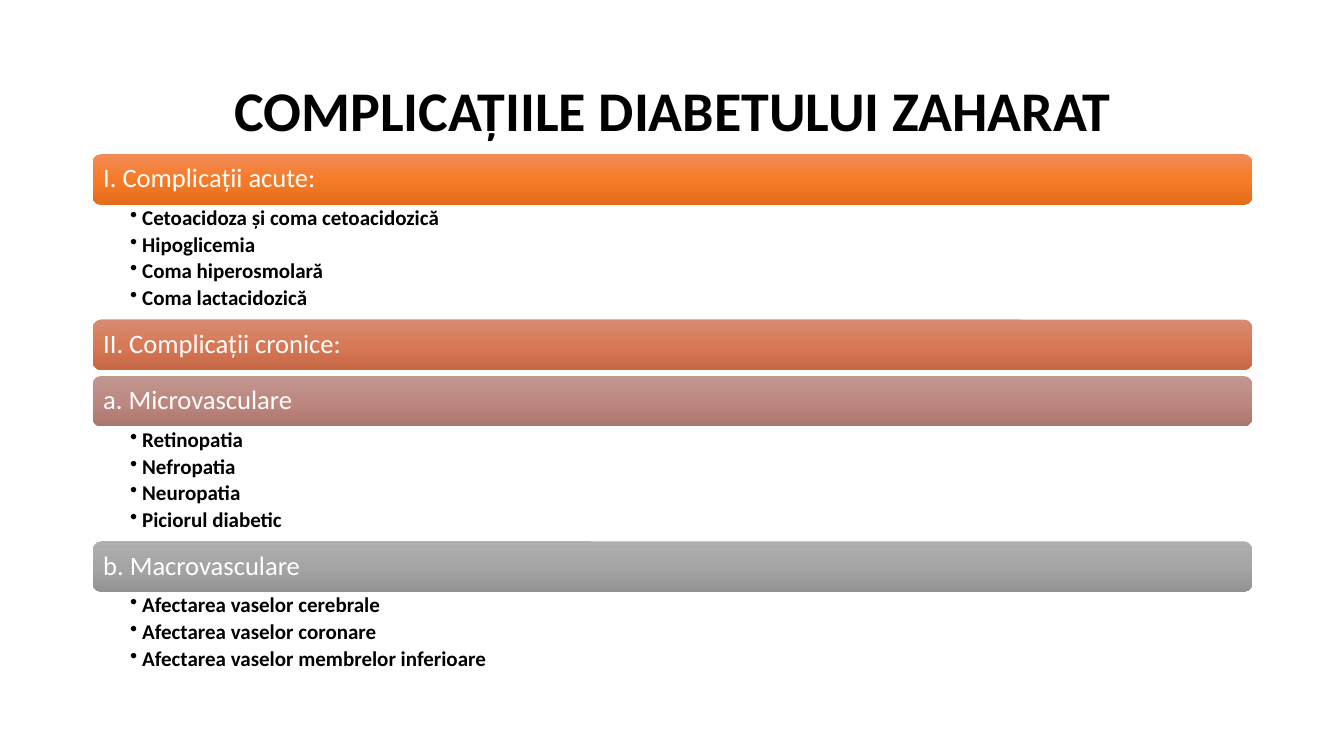
import copy
from dataclasses import dataclass

import pptx
import pptx.util
import pptx.dml.color
import pptx.enum.shapes
import pptx.enum.text
import pptx.oxml.ns
from lxml import etree

PX = 9144  # 100 px to the inch
FONT = "Calibri"
LEFT, WIDE, TALL = 92, 1150, 50
TOP, GAP = 153, 6
ROW, PAD = 28, 2
DENT = 12

HUES = {
    "text": "000000",
    "bar": "FFFFFF",
    "acute": ("F18C57", "F67B28", "E56C19"),
    "chronic": ("D78B72", "D77956", "C66846"),
    "micro": ("C19791", "BC8880", "AA766E"),
    "macro": ("AFAFAF", "A5A5A5", "939393"),
}


@dataclass
class Part:
    head: str
    hue: str
    items: tuple[str, ...] = ()


PARTS = [
    Part("I. Complicații acute:", "acute",
         ("Cetoacidoza și coma cetoacidozică", "Hipoglicemia",
          "Coma hiperosmolară", "Coma lactacidozică")),
    Part("II. Complicații cronice:", "chronic"),
    Part("a. Microvasculare", "micro",
         ("Retinopatia", "Nefropatia", "Neuropatia", "Piciorul diabetic")),
    Part("b. Macrovasculare", "macro",
         ("Afectarea vaselor cerebrale", "Afectarea vaselor coronare",
          "Afectarea vaselor membrelor inferioare")),
]


def px(*sizes: int) -> list[int]:
    return [size * PX for size in sizes]


def tint(code: str) -> pptx.dml.color.RGBColor:
    return pptx.dml.color.RGBColor.from_string(code)


def write(frame, *lines: str, size: int, hue: str = "text", bold: bool = False,
          align: str = "LEFT", anchor: str = "MIDDLE", after: float = 0,
          inset: tuple[int, ...] = (10, 5, 10, 5), dots: bool = False) -> None:
    """Fill a text frame with one paragraph per line."""
    frame.word_wrap = True
    frame.auto_size = pptx.enum.text.MSO_AUTO_SIZE.NONE
    frame.vertical_anchor = pptx.enum.text.MSO_ANCHOR[anchor]
    (frame.margin_left, frame.margin_top,
     frame.margin_right, frame.margin_bottom) = px(*inset)
    for num, line in enumerate(lines):
        para = frame.add_paragraph() if num else frame.paragraphs[0]
        para.alignment = pptx.enum.text.PP_ALIGN[align]
        para.line_spacing = 0.9
        para.space_after = pptx.util.Pt(after)
        if dots:
            para.level = 1
            props = para._p.get_or_add_pPr()
            props.set("marL", str(DENT * PX))
            props.set("indent", str(-DENT * PX))
            mark = etree.SubElement(props, pptx.oxml.ns.qn("a:buChar"))
            mark.set("char", "•")
        run = para.add_run()
        run.text = line
        run.font.name = FONT
        run.font.size = pptx.util.Pt(size)
        run.font.bold = bold
        run.font.color.rgb = tint(HUES[hue])


def shade(fill, codes: tuple[str, ...]) -> None:
    """Set a top-down gradient with evenly spaced stops."""
    fill.gradient()
    fill.gradient_angle = 270
    stops = fill._fill._gradFill.gsLst
    stops.append(copy.deepcopy(stops[-1]))
    for num, (stop, code) in enumerate(zip(fill.gradient_stops, codes)):
        stop.position = num / (len(codes) - 1)
        stop.color.rgb = tint(code)


def draw(slide, part: Part, top: int) -> int:
    """Draw a bar and its list, and return the top of the next bar."""
    bar = slide.shapes.add_shape(
        pptx.enum.shapes.MSO_SHAPE.ROUNDED_RECTANGLE, *px(LEFT, top, WIDE, TALL))
    bar.shadow.inherit = False
    bar.line.fill.background()
    shade(bar.fill, HUES[part.hue])
    write(bar.text_frame, part.head, size=19, hue="bar", inset=(8, 8, 8, 8))
    top += TALL
    if not part.items:
        return top + GAP
    high = len(part.items) * ROW + PAD
    box = slide.shapes.add_textbox(*px(LEFT, top, WIDE, high))
    write(box.text_frame, *part.items, size=15, bold=True, anchor="TOP",
          after=2.8, inset=(37, 3, 15, 3), dots=True)
    return top + high


def main() -> None:
    deck = pptx.Presentation()
    deck.slide_width, deck.slide_height = px(1333, 750)
    slide = deck.slides.add_slide(deck.slide_layouts.get_by_name("Title Only"))

    # Title
    title = slide.shapes.title
    title.left, title.top, title.width, title.height = px(LEFT, 40, WIDE, 145)
    write(title.text_frame, "COMPLICAȚIILE DIABETULUI ZAHARAT",
          size=40, bold=True, align="CENTER")

    # Bars with their lists
    top = TOP
    for part in PARTS:
        top = draw(slide, part, top)

    deck.save("out.pptx")


if __name__ == "__main__":
    main()
